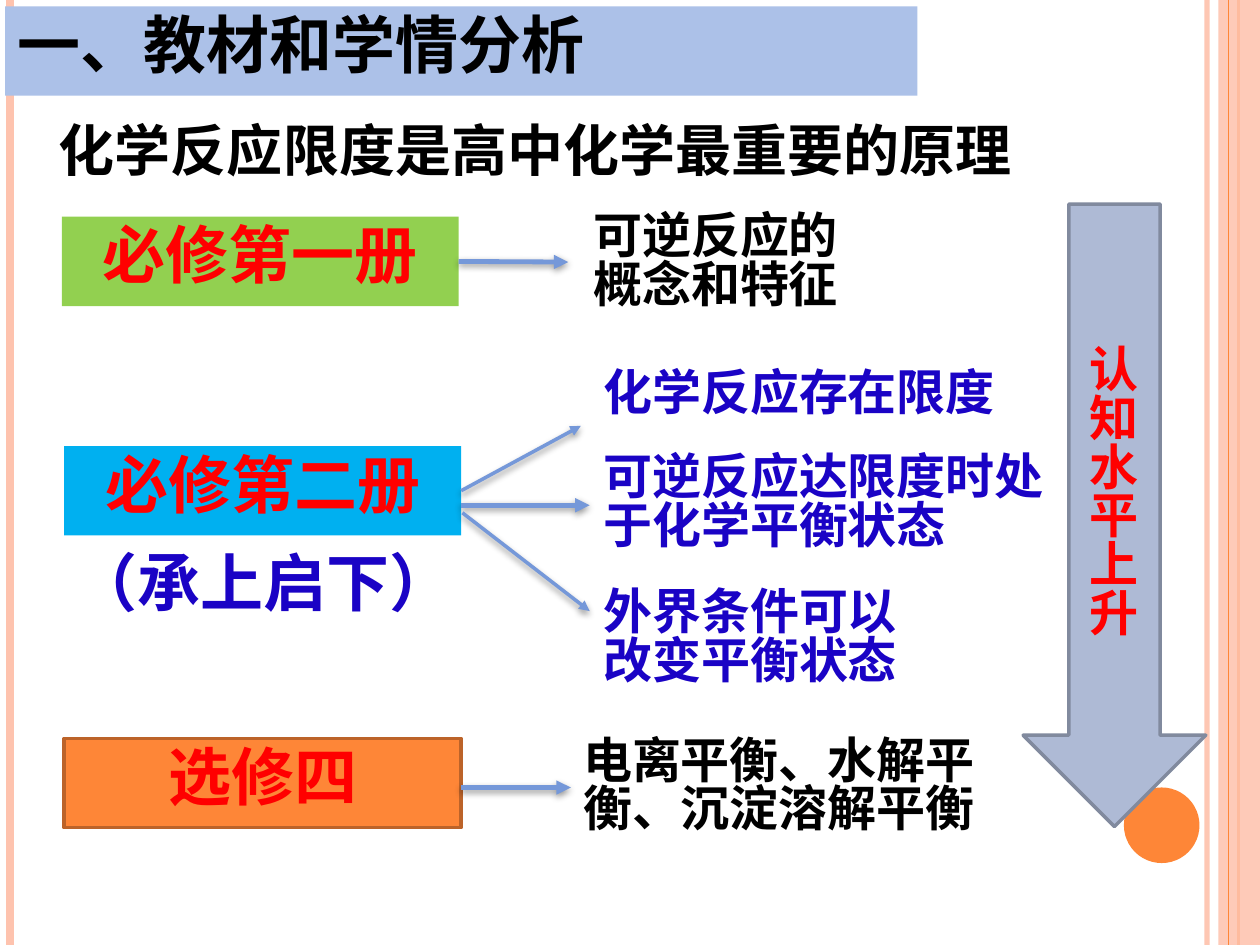
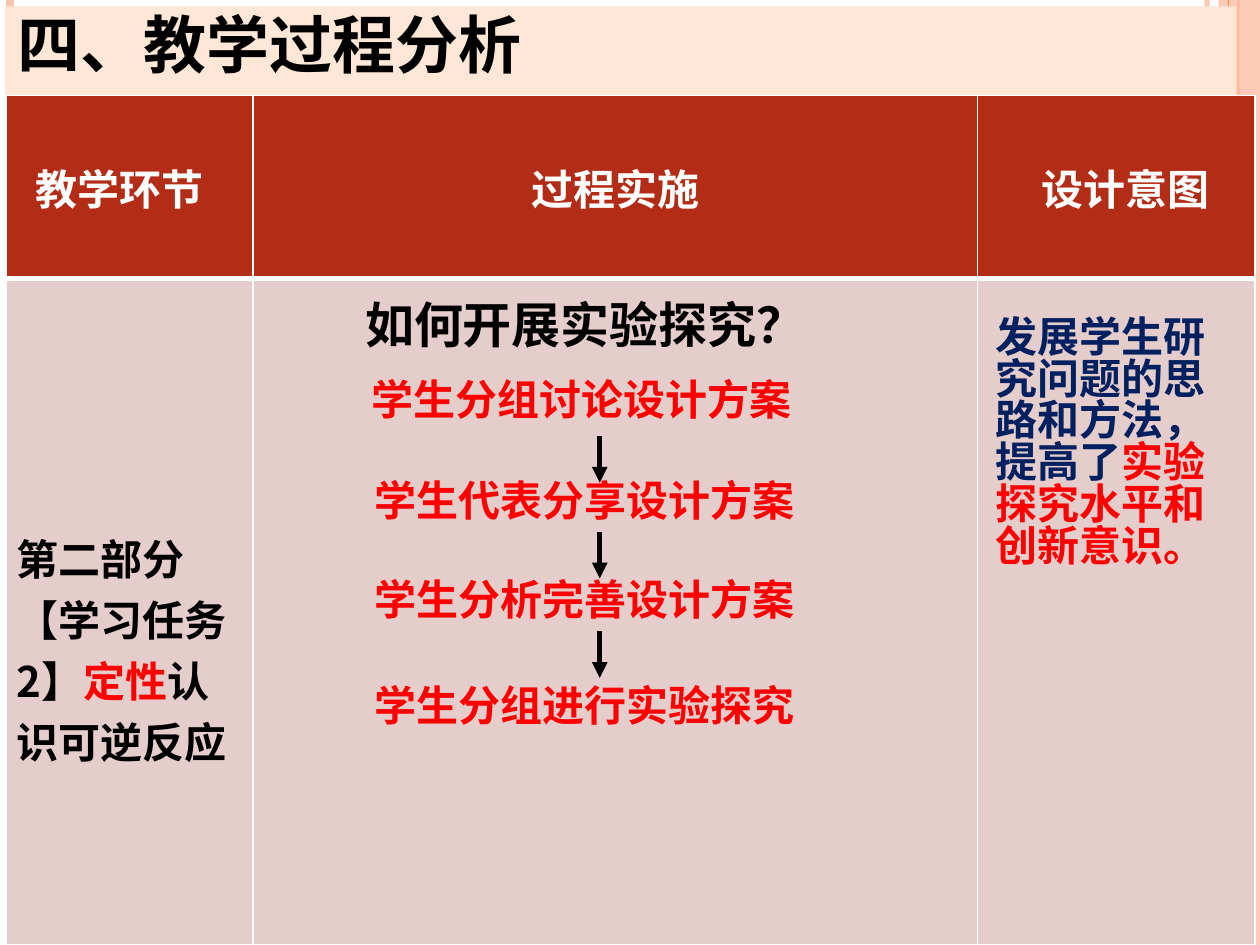
from lxml import etree
from pptx import Presentation
from pptx import util as u
from pptx.dml import color
from pptx.enum import shapes, text
from pptx.oxml import ns

FONT = "Noto Sans CJK SC"
BLACK, WHITE, RED, BLUE, NAVY = "000000", "FFFFFF", "FF0000", "1A03C5", "002060"
ORANGE, PEACH, STEEL = "FE8637", "FEC3AE", "7598D9"
TIGHT = 0.83  # line spacing of free text, as a share of the font's own

# Page frame: x, colour, width, opacity of each vertical rule
RULES_BEHIND = [(9.58, PEACH, 3, 93), (0.08, PEACH, 4.5, 100), (9.83, ORANGE, 1.5, 100)]
RULE_FRONT = (9.75, ORANGE, 0.75, 100)
SIDE_BAND, DOT = (9.67, 0, 0.33, 7.5), (8.92, 6.25, 0.6, 0.6)

# Slide 1
TEXTBOOK_TITLE = ("一、教材和学情分析", 7.24, "ACC1E8")
BOOKS = [  # name, left, top, fill, outline
    ("必修第一册", 0.49, 1.72, "92D050", None),
    ("必修第二册", 0.51, 3.54, "00B0F0", None),
    ("选修四", 0.51, 5.86, ORANGE, "BC6329"),
]
BOOK_SIZE = (3.15, 0.71)
TEXTBOOK_NOTES = [  # words, place, size, colour
    ("化学反应限度是高中化学最重要的原理", (0.37, 0.92, 7.86, 0.64), 32, BLACK),
    ("可逆反应的概念和特征", (4.61, 1.62, 2.28, 1.04), 28, BLACK),
    ("化学反应存在限度", (4.69, 2.86, 3.36, 0.57), 28, BLUE),
    ("可逆反应达限度时处于化学平衡状态", (4.69, 3.53, 3.72, 1.04), 28, BLUE),
    ("外界条件可以改变平衡状态", (4.69, 4.6, 2.91, 1.04), 28, BLUE),
    ("电离平衡、水解平衡、沉淀溶解平衡", (4.53, 5.78, 3.46, 1.04), 28, BLACK),
    ("（承上启下）", (0.49, 4.32, 3.39, 0.71), 36, BLUE),
]
BOOK_ARROWS = [  # start, end, width, index of the book joined at its right side
    ((3.64, 2.08), (4.51, 2.08), 2.75, 0),
    ((3.66, 3.89), (4.61, 3.38), 2, 1),
    ((3.66, 4.01), (4.68, 4.01), 2.75, None),
    ((3.67, 4.07), (4.68, 4.85), 2, None),
    ((3.66, 6.25), (4.53, 6.25), 2.75, None),
]
LEVEL_ARROW = (8.12, 1.62, 1.45, 4.94)
LEVEL_WORDS = ["认", "知", "水平", "上", "升"]

# Slide 2
PROCESS_TITLE = ("四、教学过程分析", 9.77, "FFE7D7")
TABLE_PLACE = (0.05, 0.76, 9.91, 6.74)
COLUMNS, ROWS = [1.96, 5.75, 2.2], [1.45, 5.29]
HEADINGS = [  # words, alignment, extra left indent
    ("教学环节", text.PP_ALIGN.LEFT, 0.15),
    ("过程实施", text.PP_ALIGN.CENTER, 0),
    ("设计意图", text.PP_ALIGN.CENTER, 0.15),
]
TASK = ["第二部分",
        [("【学习任务2】", BLACK), ("定性", RED), ("认识可逆反应", BLACK)]]
TASK_DROP = 1.93
QUESTION = ("如何开展实验探究？", (2.8, 2.33, 4.33, 0.57))
STEPS = [
    ("学生分组讨论设计方案", 2.85, 2.95),
    ("学生代表分享设计方案", 2.87, 3.75),
    ("学生分析完善设计方案", 2.87, 4.54),
    ("学生分组进行实验探究", 2.87, 5.38),
]
STEP_ARROW_X, STEP_ARROW_LENGTH = 4.76, 0.37
STEP_ARROW_TOPS = [3.46, 4.22, 5.01]
INTENT = [[("发展学生研究问题的思路和方法，提高了", NAVY),
           ("实验探究水平和创新意识。", RED)]]
INTENT_PLACE = (7.8, 2.45, 2.14, 2.52)


def rgb(hex_code):
    return color.RGBColor.from_string(hex_code)


def inches(values):
    return [u.Inches(value) for value in values]


def add_element(parent, tag, **attributes):
    child = etree.SubElement(parent, ns.qn(tag))
    for name, value in attributes.items():
        child.set(name, str(value))
    return child


def add_line_xml(parent, tag, width, hex_code):
    line = add_element(parent, tag, w=int(u.Pt(width)))
    add_element(add_element(line, "a:solidFill"), "a:srgbClr", val=hex_code)
    return line


def set_opacity(shape, percent):
    if percent < 100:
        tint = next(shape.element.spPr.iter(ns.qn("a:srgbClr")))
        add_element(tint, "a:alpha", val=percent * 1000)


def write(frame, paragraphs, size=28, ink=BLACK, align=text.PP_ALIGN.LEFT,
          spacing=TIGHT, outline=None):
    """Fill a frame; a paragraph is a string or a list of (words, colour)."""
    for index, content in enumerate(paragraphs):
        para = frame.paragraphs[0] if index == 0 else frame.add_paragraph()
        para.alignment = align
        if spacing:
            para.line_spacing = spacing
        spans = [(content, ink)] if isinstance(content, str) else content
        for words, hex_code in spans:
            span = para.add_run()
            span.text = words
            span.font.size, span.font.bold = u.Pt(size), True
            span.font.color.rgb = rgb(hex_code)
            span.font.name = FONT
            properties = span.font._element
            add_element(properties, "a:ea", typeface=FONT)
            if outline:
                properties.insert(0, add_line_xml(properties, "a:ln", 0.75, outline))


def write_box(shape, paragraphs, size=28, anchor=text.MSO_ANCHOR.TOP, **style):
    frame = shape.text_frame
    frame.word_wrap = True
    frame.auto_size = text.MSO_AUTO_SIZE.NONE
    frame.vertical_anchor = anchor
    frame.margin_left = frame.margin_right = u.Inches(0.1)
    frame.margin_bottom = u.Inches(0.05)
    # tight lines lose height above the glyphs; the inset gives it back
    frame.margin_top = u.Inches(0.05 + 0.09 * size / 72)
    write(frame, paragraphs, size=size, **style)


def add_note(page, words, place, **style):
    box = page.shapes.add_textbox(*inches(place))
    write_box(box, words if isinstance(words, list) else [words], **style)


def add_figure(page, kind, place, fill, outline=None):
    figure = page.shapes.add_shape(kind, *inches(place))
    figure.shadow.inherit = False
    figure.fill.solid()
    figure.fill.fore_color.rgb = rgb(fill)
    if outline:
        figure.line.color.rgb = rgb(outline)
        figure.line.width = u.Pt(2)
    else:
        figure.line.fill.background()
    return figure


def add_line(page, start, end, hex_code, width, arrow=False, shadow=None):
    """Draw a straight line; shadow is (opacity, blur, distance)."""
    line = page.shapes.add_connector(shapes.MSO_CONNECTOR.STRAIGHT, *inches(start + end))
    line.line.color.rgb = rgb(hex_code)
    line.line.width = u.Pt(width)
    properties = line.element.spPr
    if arrow:
        add_element(properties.find(ns.qn("a:ln")), "a:tailEnd", type="triangle")
    effects = add_element(properties, "a:effectLst")
    if shadow:
        opacity, blur, distance = shadow
        cast = add_element(effects, "a:outerShdw", blurRad=int(u.Pt(blur)),
                           dist=int(u.Pt(distance)), dir=90 * 60000, rotWithShape=0)
        tint = add_element(cast, "a:srgbClr", val=BLACK)
        add_element(tint, "a:alpha", val=opacity * 1000)
    return line


def add_rule(page, x, hex_code, width, opacity):
    rule = add_line(page, (x, 0), (x, 7.5), hex_code, width)
    set_opacity(rule, opacity)
    return rule


def frame_layout(layout, page):
    """Draw the page frame once and hand it to the layout."""
    parts = [add_rule(page, *rule) for rule in RULES_BEHIND]
    band = add_figure(page, shapes.MSO_SHAPE.RECTANGLE, SIDE_BAND, PEACH)
    set_opacity(band, 87)
    parts += [band, add_rule(page, *RULE_FRONT),
              add_figure(page, shapes.MSO_SHAPE.OVAL, DOT, ORANGE)]
    for part in parts:
        layout.shapes.element.append(part.element)


def set_title(page, words, width, fill):
    title = page.shapes.title
    title.left, title.top, title.width, title.height = inches((0.04, 0.05, width, 0.71))
    title.fill.solid()
    title.fill.fore_color.rgb = rgb(fill)
    write_box(title, [words], size=36)


def build_textbook_slide(page):
    set_title(page, *TEXTBOOK_TITLE)
    books = []
    for name, left, top, fill, outline in BOOKS:
        book = add_figure(page, shapes.MSO_SHAPE.RECTANGLE,
                          (left, top, *BOOK_SIZE), fill, outline)
        write_box(book, [name], size=36, ink=RED, align=text.PP_ALIGN.CENTER,
                  outline=WHITE)
        books.append(book)
    for start, end, width, joined in BOOK_ARROWS:
        shadow = (40, 4, 2) if width == 2 else (42, 4, 1.6)
        arrow = add_line(page, start, end, STEEL, width, arrow=True, shadow=shadow)
        if joined is not None:
            arrow.begin_connect(books[joined], 3)
    for words, place, size, ink in TEXTBOOK_NOTES:
        add_note(page, words, place, size=size, ink=ink)
    level = add_figure(page, shapes.MSO_SHAPE.DOWN_ARROW, LEVEL_ARROW, "AEBAD5", "818A9E")
    write_box(level, LEVEL_WORDS, ink=RED, align=text.PP_ALIGN.CENTER,
              anchor=text.MSO_ANCHOR.MIDDLE)


def style_cell(cell, fill, top, bottom):
    cell.margin_left = cell.margin_right = u.Inches(0.08)
    cell.margin_top = cell.margin_bottom = u.Inches(0.04)
    properties = cell._tc.get_or_add_tcPr()
    for side, width in zip("LRTB", (1, 1, top, bottom)):
        add_line_xml(properties, f"a:ln{side}", width, WHITE)
    cell.fill.solid()
    cell.fill.fore_color.rgb = rgb(fill)


def add_process_table(page):
    table = page.shapes.add_table(len(ROWS), len(COLUMNS), *inches(TABLE_PLACE)).table
    for column, width in zip(table.columns, COLUMNS):
        column.width = u.Inches(width)
    for row, height in zip(table.rows, ROWS):
        row.height = u.Inches(height)
    for index, (words, align, indent) in enumerate(HEADINGS):
        heading, body = table.cell(0, index), table.cell(1, index)
        style_cell(heading, "B32C16", 1, 3)
        style_cell(body, "E5CDCC", 3, 1)
        heading.margin_left = u.Inches(0.08 + indent)
        heading.vertical_anchor = text.MSO_ANCHOR.MIDDLE
        write(heading.text_frame, [words], size=24, ink=WHITE, align=align, spacing=None)
    task = table.cell(1, 0)
    task.margin_top = u.Inches(0.04 + TASK_DROP)
    write(task.text_frame, TASK, size=24, spacing=None)


def build_process_slide(page):
    set_title(page, *PROCESS_TITLE)
    add_process_table(page)
    add_note(page, *QUESTION)
    for words, left, top in STEPS:
        add_note(page, words, (left, top, 3.75, 0.5), size=24, ink=RED)
    for top in STEP_ARROW_TOPS:
        add_line(page, (STEP_ARROW_X, top), (STEP_ARROW_X, top + STEP_ARROW_LENGTH),
                 BLACK, 3, arrow=True)
    add_note(page, INTENT, INTENT_PLACE, size=24)


def main():
    deck = Presentation()
    deck.slide_width, deck.slide_height = inches((10, 7.5))
    layout = deck.slide_layouts.get_by_name("Title Only")
    textbook, process = [deck.slides.add_slide(layout) for _ in range(2)]
    frame_layout(layout, textbook)
    build_textbook_slide(textbook)
    build_process_slide(process)
    deck.save("out.pptx")


if __name__ == "__main__":
    main()
